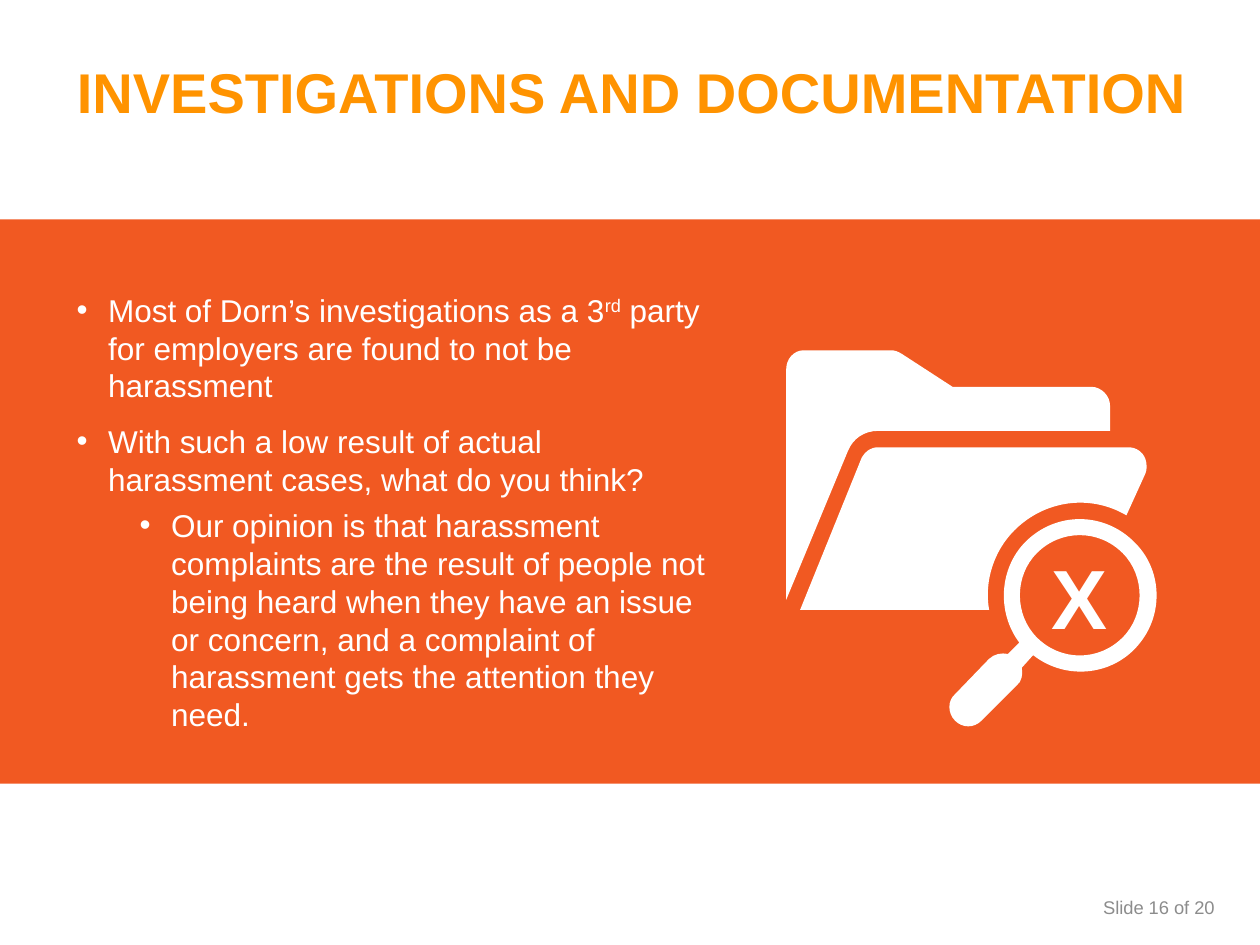
from lxml.etree import SubElement
from pptx import Presentation
from pptx.dml.color import RGBColor
from pptx.enum.shapes import MSO_SHAPE as Shape
from pptx.enum.text import MSO_ANCHOR as Anchor, MSO_AUTO_SIZE as AutoSize, PP_ALIGN as Align
from pptx.oxml.ns import qn
from pptx.util import Inches, Pt

COLORS = {"band": "F15922", "title": "FF9300", "white": "FFFFFF", "grey": "8C8C8C"}

TITLE = "INVESTIGATIONS AND DOCUMENTATION"
FOOTER = "Slide 16 of 20"
# Each bullet: level, space before in points, runs of (text, is superscript)
BULLETS = [
    (0, 0, [("Most of Dorn’s investigations as a 3", False), ("rd", True),
            (" party for employers are found to not be harassment", False)]),
    (0, 10, [("With such a low result of actual harassment cases, what do you think?", False)]),
    (1, 5, [("Our opinion is that harassment complaints are the result of people not being "
             "heard when they have an issue or concern, and a complaint of harassment gets "
             "the attention they need.", False)]),
]

# Icon parts in inches: box, then contours. Each contour starts at a point;
# after it two numbers give a line and six give a cubic curve.
FOLDER_BACK = (6.24, 2.78, 2.57, 1.98), [
    [(6.97, 3.42), (8.81, 3.42), (8.81, 3.22), (8.81, 3.14, 8.74, 3.07, 8.66, 3.07),
     (7.56, 3.07), (7.16, 2.81), (7.13, 2.79, 7.1, 2.78, 7.07, 2.78), (6.38, 2.78),
     (6.3, 2.78, 6.24, 2.85, 6.24, 2.93), (6.24, 4.76), (6.73, 3.58),
     (6.77, 3.48, 6.86, 3.42, 6.97, 3.42)],
]
FOLDER_FRONT = (6.35, 3.55, 2.75, 1.29), [
    [(8.05, 4.21), (8.29, 3.97, 8.65, 3.92, 8.94, 4.09), (9.09, 3.76),
     (9.1, 3.74, 9.1, 3.72, 9.1, 3.7), (9.1, 3.62, 9.05, 3.56, 8.97, 3.55), (6.97, 3.55),
     (6.91, 3.55, 6.87, 3.58, 6.84, 3.63), (6.35, 4.84), (7.85, 4.84),
     (7.81, 4.61, 7.89, 4.37, 8.05, 4.21)],
]
MAGNIFIER = (7.53, 4.12, 1.64, 1.64), [
    [(9, 4.3), (8.76, 4.06, 8.38, 4.06, 8.14, 4.3), (7.93, 4.51, 7.91, 4.86, 8.09, 5.1),
     (8, 5.19), (7.95, 5.18, 7.89, 5.19, 7.85, 5.23), (7.58, 5.51),
     (7.52, 5.56, 7.52, 5.66, 7.58, 5.72), (7.64, 5.78, 7.73, 5.78, 7.79, 5.72),
     (8.07, 5.44), (8.11, 5.41, 8.12, 5.35, 8.11, 5.3), (8.2, 5.2),
     (8.47, 5.41, 8.85, 5.36, 9.05, 5.1), (9.24, 4.86, 9.22, 4.51, 9, 4.3)],
    [(8.91, 5.06), (8.72, 5.25, 8.42, 5.25, 8.23, 5.06), (8.05, 4.88, 8.05, 4.57, 8.23, 4.39),
     (8.42, 4.2, 8.72, 4.2, 8.91, 4.39), (9.09, 4.57, 9.09, 4.88, 8.91, 5.06)],
]


def set_all(target, **values):
    for name, value in values.items():
        setattr(target, name, value)


def place(shape, box):
    set_all(shape, **dict(zip(("left", "top", "width", "height"), map(Inches, box))))


def paint(shape, color):
    shape.shadow.inherit = False
    shape.fill.solid()
    shape.fill.fore_color.rgb = RGBColor.from_string(COLORS[color])
    shape.line.fill.background()


def add_run(paragraph, text, size, color, bold=False):
    run = paragraph.add_run()
    run.text = text
    set_all(run.font, name="Arial", size=Pt(size), bold=bold)
    run.font.color.rgb = RGBColor.from_string(COLORS[color])
    return run


def add_text_box(slide, box, **frame_values):
    frame = slide.shapes.add_textbox(*map(Inches, box)).text_frame
    set_all(frame, **{"word_wrap": True, **frame_values})
    return frame


def add_outline(slide, box, contours):
    """Add a freeform, then give its outline the true lines and curves."""
    left, top, width, height = box
    builder = slide.shapes.build_freeform(Inches(left), Inches(top))
    builder.add_line_segments([(Inches(left + width), Inches(top + height))])
    shape = builder.convert_to_shape()
    place(shape, box)
    outline = next(shape._element.iter(qn("a:path")))
    for child in list(outline):
        outline.remove(child)
    outline.set("w", str(Inches(width)))
    outline.set("h", str(Inches(height)))
    for contour in contours:
        for index, segment in enumerate(contour):
            tag = "cubicBezTo" if len(segment) == 6 else "lnTo" if index else "moveTo"
            command = SubElement(outline, qn(f"a:{tag}"))
            for x, y in zip(segment[::2], segment[1::2]):
                SubElement(command, qn("a:pt"), x=str(Inches(x - left)), y=str(Inches(y - top)))
        SubElement(outline, qn("a:close"))
    paint(shape, "white")


def add_bullets(frame):
    for index, (level, space, runs) in enumerate(BULLETS):
        paragraph = frame.add_paragraph() if index else frame.paragraphs[0]
        set_all(paragraph, level=level, space_before=Pt(space))
        properties = paragraph._p.get_or_add_pPr()
        properties.set("marL", str(Inches(0.25 + 0.5 * level)))
        properties.set("indent", str(Inches(-0.25)))
        SubElement(properties, qn("a:buFont")).set("typeface", "Arial")
        SubElement(properties, qn("a:buChar")).set("char", "•")
        for text, superscript in runs:
            run = add_run(paragraph, text, 18, "white")
            if superscript:
                run._r.get_or_add_rPr().set("baseline", "30000")


def main():
    presentation = Presentation()
    set_all(presentation, slide_width=Inches(10), slide_height=Inches(7.5))
    slide = presentation.slides.add_slide(presentation.slide_layouts[5])

    # Title
    title = slide.shapes.title
    place(title, (0.51, 0.03, 9.04, 1.45))
    set_all(title.text_frame, vertical_anchor=Anchor.MIDDLE, auto_size=AutoSize.NONE)
    heading = title.text_frame.paragraphs[0]
    set_all(heading, alignment=Align.LEFT, line_spacing=0.9)
    add_run(heading, TITLE, 32, "title", bold=True)

    # Colour band with bullets
    band = slide.shapes.add_shape(Shape.RECTANGLE, 0, Inches(1.74), Inches(10), Inches(4.48))
    paint(band, "band")
    add_bullets(add_text_box(slide, (0.51, 2.26, 5.23, 4.16)))

    # Slide count
    footer = add_text_box(slide, (6.26, 7, 3.48, 0.4), vertical_anchor=Anchor.MIDDLE)
    footer.paragraphs[0].alignment = Align.RIGHT
    add_run(footer.paragraphs[0], FOOTER, 10.5, "grey")

    # Folder and magnifier icon
    for box, contours in (FOLDER_BACK, FOLDER_FRONT, MAGNIFIER):
        add_outline(slide, box, contours)
    mark = add_text_box(slide, (8.25, 4.28, 0.65, 0.91),
                        word_wrap=False, auto_size=AutoSize.SHAPE_TO_FIT_TEXT)
    add_run(mark.paragraphs[0], "X", 48, "white", bold=True)

    presentation.save("out.pptx")


if __name__ == "__main__":
    main()
